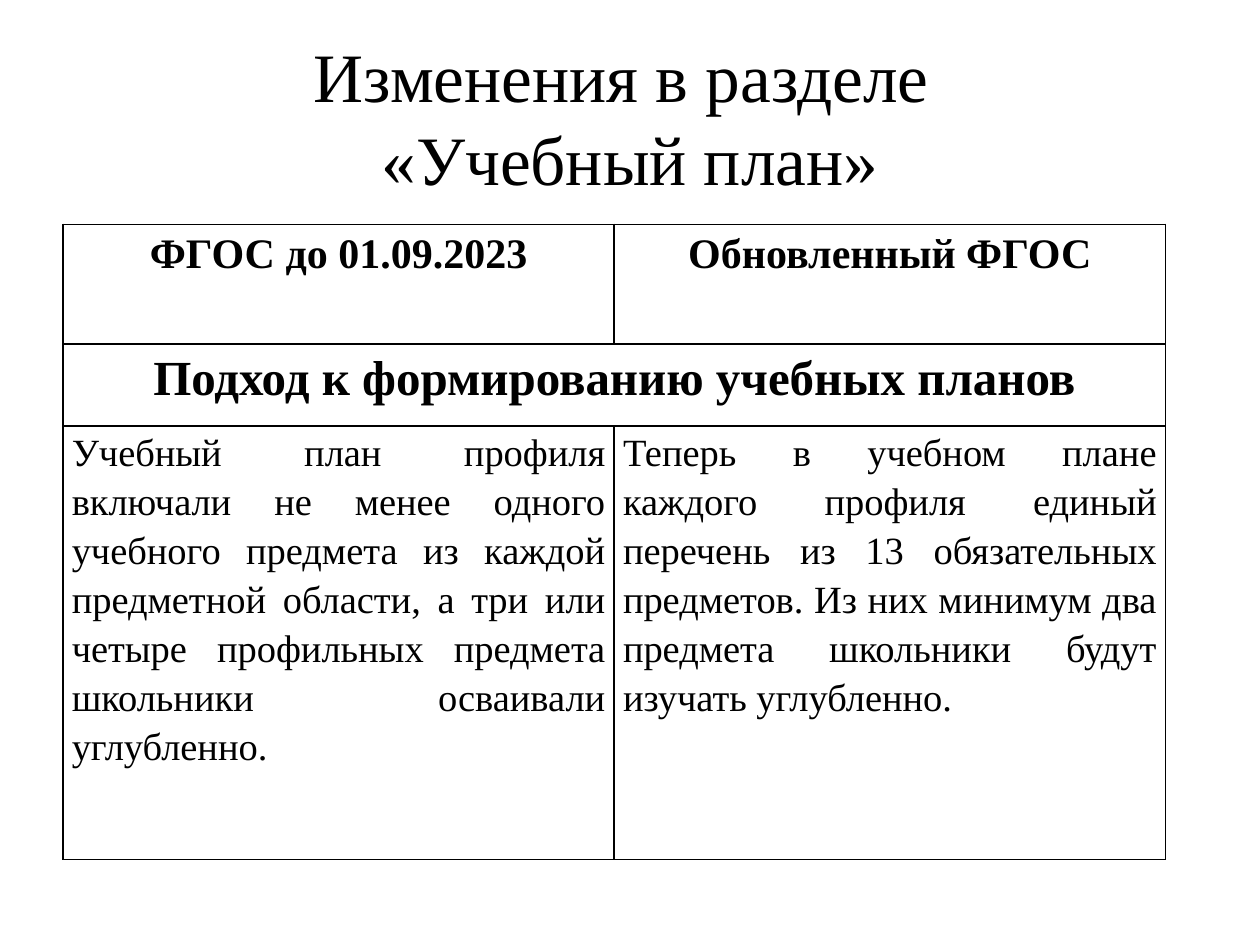
import pptx
import pptx.util
import pptx.dml.color
import pptx.enum.text
import pptx.oxml
import pptx.oxml.ns
from pptx.util import Inches

# Content
TITLE = "Изменения в разделе \v«Учебный план»"
HEADERS = ("ФГОС до 01.09.2023", "Обновленный ФГОС")
SECTION = ("Подход к формированию учебных планов", "")
COMPARISON = (
    "Учебный план профиля включали не менее одного учебного предмета из каждой "
    "предметной области, а три или четыре профильных предмета школьники "
    "осваивали углубленно.",
    "Теперь в учебном плане каждого профиля единый перечень из 13 обязательных "
    "предметов. Из них минимум два предмета школьники будут изучать углубленно.",
)

THEME = {
    "font": "Times New Roman", "ink": "000000", "paper": "FFFFFF",
    "title": 39.6, "header": 24, "section": 28, "body": 22, "border": 1,
}
ALIGN = pptx.enum.text.PP_ALIGN

# Texts, type size, bold, alignment, side margin, row height
ROWS = (
    (HEADERS, "header", True, ALIGN.CENTER, 0.05, 0.95),
    (SECTION, "section", True, ALIGN.CENTER, 0.05, 0.65),
    (COMPARISON, "body", False, ALIGN.JUSTIFY, 0.07, 3.44),
)
TABLE_LEFT, TABLE_TOP, TABLE_WIDTH = 0.5, 1.78, 8.75


def colour(name):
    return pptx.dml.color.RGBColor.from_string(THEME[name])


def style_paragraph(para, size, bold, align):
    para.alignment = align
    para.font.name = THEME["font"]
    para.font.size = pptx.util.Pt(THEME[size])
    para.font.bold = bold
    para.font.color.rgb = colour("ink")


def add_borders(cell):
    properties = cell._tc.get_or_add_tcPr()
    width = pptx.util.Pt(THEME["border"])
    for side in ("lnL", "lnR", "lnT", "lnB"):
        properties.append(pptx.oxml.parse_xml(
            f'<a:{side} {pptx.oxml.ns.nsdecls("a")} w="{width}"><a:solidFill>'
            f'<a:srgbClr val="{THEME["ink"]}"/></a:solidFill></a:{side}>'))


def add_title(page):
    box = page.shapes.title
    box.left, box.top = Inches(0.5), Inches(0.3)
    box.width, box.height = Inches(9), Inches(1.25)
    frame = box.text_frame
    frame.text = TITLE
    frame.auto_size = pptx.enum.text.MSO_AUTO_SIZE.NONE
    frame.vertical_anchor = pptx.enum.text.MSO_ANCHOR.MIDDLE
    style_paragraph(frame.paragraphs[0], "title", False, ALIGN.CENTER)


def add_comparison_table(page):
    table = page.shapes.add_table(
        len(ROWS), len(HEADERS), Inches(TABLE_LEFT), Inches(TABLE_TOP),
        Inches(TABLE_WIDTH), Inches(sum(row[-1] for row in ROWS))).table
    table.first_row = table.horz_banding = False
    for column in table.columns:
        column.width = Inches(TABLE_WIDTH / len(HEADERS))
    for index, (texts, size, bold, align, margin, height) in enumerate(ROWS):
        table.rows[index].height = Inches(height)
        for cell, text in zip(table.rows[index].cells, texts):
            cell.text = text
            cell.margin_left = cell.margin_right = Inches(margin)
            cell.margin_top = cell.margin_bottom = 0
            add_borders(cell)
            cell.fill.solid()
            cell.fill.fore_color.rgb = colour("paper")
            para = cell.text_frame.paragraphs[0]
            para.line_spacing = 1.15
            style_paragraph(para, size, bold, align)
    # The section heading spans both columns
    table.cell(1, 0).merge(table.cell(1, 1))


def main():
    deck = pptx.Presentation()
    deck.slide_width, deck.slide_height = Inches(10), Inches(7.5)
    page = deck.slides.add_slide(deck.slide_layouts.get_by_name("Title Only"))
    add_title(page)
    add_comparison_table(page)
    deck.save("out.pptx")


if __name__ == "__main__":
    main()
